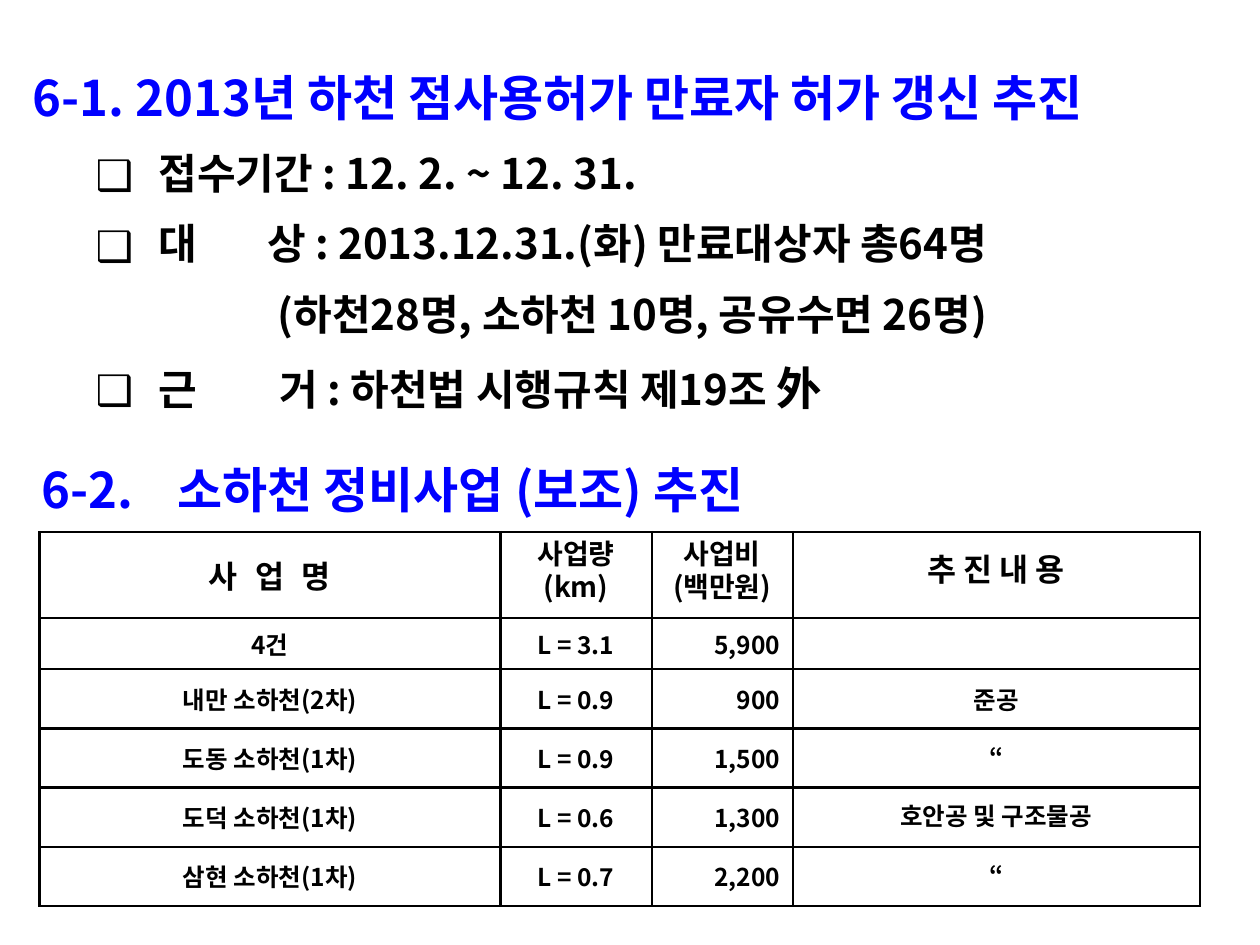
from dataclasses import dataclass

from lxml.etree import SubElement
from pptx import Presentation
from pptx.dml.color import RGBColor
from pptx.enum.text import MSO_ANCHOR, MSO_AUTO_SIZE, PP_ALIGN
from pptx.oxml.ns import qn
from pptx.util import Pt


@dataclass(frozen=True)
class Theme:
    font: str = "Noto Sans CJK KR"
    blue: RGBColor = RGBColor(0, 0, 255)
    black: RGBColor = RGBColor(0, 0, 0)
    head: int = 28
    body: int = 24
    hanja: int = 26
    label: int = 18
    unit: int = 16
    cell: int = 14
    rule: float = 1.5


THEME = Theme()
ITEMS = [
    (["접수기간 : 12. 2. ~ 12. 31."], True, 72, None),
    (["대\t상 : 2013.12.31.(화) 만료대상자 총64명"], True, 72, 134),
    (["(하천28명, 소하천 10명, 공유수면 26명)"], False, 140, None),
    (["근\t거 : 하천법 시행규칙 제19조 ", "外"], True, 72, 141),
]
WIDTHS = [263.5, 86.4, 80.6, 232.6]
HEIGHTS = [49, 29.5, 33.8, 33.8, 33.8, 33.8]
LABELS = [
    ("사 업 명", THEME.label, None),
    ("사업량\n(km)", THEME.unit, 16),
    ("사업비\n(백만원)", THEME.unit, 16),
    ("추 진 내 용", THEME.label, 18),
]
ROWS = [
    ("4건", "L = 3.1", "5,900", ""),
    ("내만 소하천(2차)", "L = 0.9", "900", "준공"),
    ("도동 소하천(1차)", "L = 0.9", "1,500", "“"),
    ("도덕 소하천(1차)", "L = 0.6", "1,300", "호안공 및 구조물공"),
    ("삼현 소하천(1차)", "L = 0.7", "2,200", "“"),
]


def style(para, size, color=THEME.black):
    font = para.font
    font.name, font.size, font.bold = THEME.font, Pt(size), True
    font.color.rgb = color
    for run in para.runs:
        SubElement(run._r.get_or_add_rPr(), qn("a:ea"), typeface=THEME.font)


def indent(para, left, hang=0, mark=None, tab=None):
    props = para._p.get_or_add_pPr()
    props.set("marL", str(Pt(left)))
    props.set("indent", str(Pt(-hang)))
    if mark:
        SubElement(props, qn("a:buFont"), typeface=THEME.font)
        SubElement(props, qn("a:buChar"), char=mark)
    else:
        SubElement(props, qn("a:buNone"))
    if tab:
        stops = SubElement(props, qn("a:tabLst"))
        SubElement(stops, qn("a:tab"), pos=str(Pt(tab)), algn="l")


def place(shape, left, top, width, height):
    shape.left, shape.top = Pt(left), Pt(top)
    shape.width, shape.height = Pt(width), Pt(height)
    frame = shape.text_frame
    frame.word_wrap = True
    frame.auto_size = MSO_AUTO_SIZE.NONE
    frame.vertical_anchor = MSO_ANCHOR.TOP
    return frame


def heading(shape, text, box, space, tab=None):
    para = place(shape, *box).paragraphs[0]
    para.text = text
    para.alignment = PP_ALIGN.LEFT
    para.line_spacing = space
    indent(para, 42, 42, tab=tab)
    style(para, THEME.head, THEME.blue)


def listing(shape, box):
    frame = place(shape, *box)
    for i, (parts, marked, left, tab) in enumerate(ITEMS):
        para = frame.add_paragraph() if i else frame.paragraphs[0]
        for part in parts:
            para.add_run().text = part
        para.line_spacing = 1.4
        indent(para, left, 36 if marked else 0, "❑" if marked else None, tab)
        style(para, THEME.body)
        if len(parts) > 1:
            para.runs[-1].font.size = Pt(THEME.hanja)


def border(cell):
    props = cell._tc.get_or_add_tcPr()
    for i, side in enumerate(("a:lnL", "a:lnR", "a:lnT", "a:lnB")):
        line = props.makeelement(qn(side), {"w": str(Pt(THEME.rule))})
        fill = SubElement(line, qn("a:solidFill"))
        SubElement(fill, qn("a:srgbClr"), val=str(THEME.black))
        props.insert(i, line)


def fill_cell(cell, text, size, align=PP_ALIGN.CENTER, pitch=None):
    cell.fill.background()
    cell.vertical_anchor = MSO_ANCHOR.MIDDLE
    border(cell)
    cell.text = text
    for para in cell.text_frame.paragraphs:
        para.alignment = align
        para.space_before = Pt(size * 0.2)
        if pitch:
            para.line_spacing = Pt(pitch)
        style(para, size)


def add_grid(slide):
    grid = slide.shapes.add_table(
        len(HEIGHTS), len(WIDTHS), Pt(22.5), Pt(304),
        Pt(sum(WIDTHS)), Pt(sum(HEIGHTS))).table
    for col, width in zip(grid.columns, WIDTHS):
        col.width = Pt(width)
    for row, height in zip(grid.rows, HEIGHTS):
        row.height = Pt(height)
    for j, (text, size, pitch) in enumerate(LABELS):
        fill_cell(grid.cell(0, j), text, size, pitch=pitch)
    name = grid.cell(0, 0).text_frame.paragraphs[0].runs[0]
    name._r.get_or_add_rPr().set("spc", "300")
    for i, row in enumerate(ROWS, 1):
        for j, text in enumerate(row):
            align = PP_ALIGN.RIGHT if j == 2 else PP_ALIGN.CENTER
            pitch = 18 if j == 3 and i > 2 else None
            fill_cell(grid.cell(i, j), text, THEME.cell, align, pitch)


def main():
    deck = Presentation()
    deck.slide_width, deck.slide_height = Pt(720), Pt(540)
    slide = deck.slides.add_slide(deck.slide_layouts[5])
    heading(slide.shapes.title, "6-1. 2013년 하천 점사용허가 만료자 허가 갱신 추진",
            (11.5, 28, 680.5, 48), 1.2)
    listing(slide.shapes.add_textbox(0, 0, 0, 0), (11.5, 69, 680.5, 173.5))
    add_grid(slide)
    heading(slide.shapes.add_textbox(0, 0, 0, 0), "6-2.\t소하천 정비사업 (보조) 추진",
            (16.5, 242, 461.5, 58.5), 1.5, 72)
    deck.save("out.pptx")


if __name__ == "__main__":
    main()
